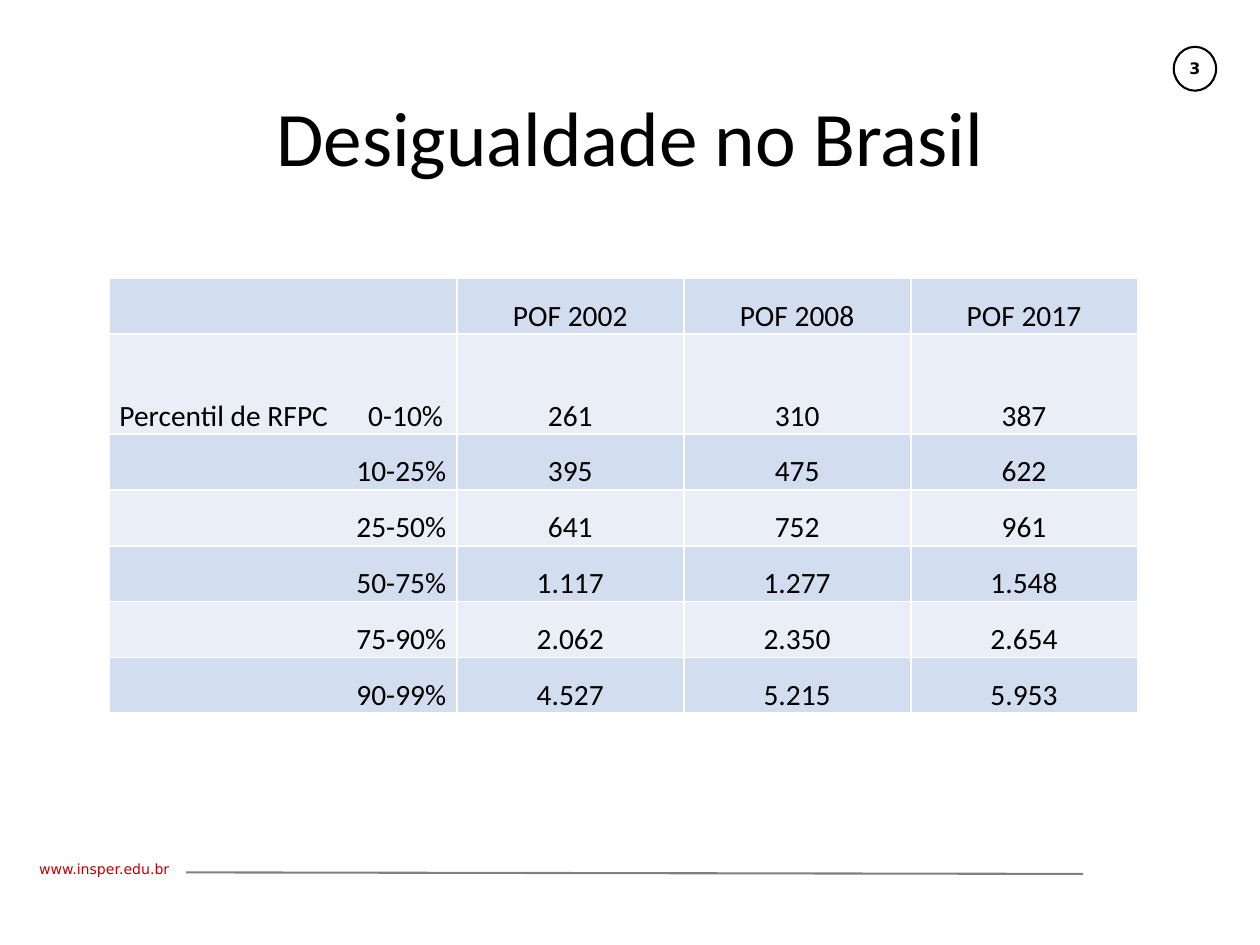
from dataclasses import dataclass

from lxml import etree
from pptx import Presentation
from pptx.dml.color import RGBColor
from pptx.enum.shapes import MSO_CONNECTOR, MSO_SHAPE
from pptx.enum.text import MSO_ANCHOR, PP_ALIGN
from pptx.oxml.ns import qn
from pptx.util import Inches, Pt

LEFT, CENTER, RIGHT = PP_ALIGN.LEFT, PP_ALIGN.CENTER, PP_ALIGN.RIGHT
TOP, MIDDLE, BOTTOM = MSO_ANCHOR.TOP, MSO_ANCHOR.MIDDLE, MSO_ANCHOR.BOTTOM
STRAIGHT = MSO_CONNECTOR.STRAIGHT
ELLIPSE = MSO_SHAPE.OVAL
TITLE_ONLY = 5


@dataclass(frozen=True)
class Theme:
    font: str = "Calibri"
    footer_font: str = "DejaVu Sans"
    text: str = "000000"
    address: str = "C00000"
    rule: str = "808080"
    border: str = "FFFFFF"
    bands: tuple = ("D2DEEF", "EAEFF7")
    title_size: float = 36.7
    table_size: float = 14
    address_size: float = 6.7
    number_size: float = 7.5
    line_width: float = 1


class SlideBuilder:
    def __init__(self, presentation, theme):
        self.theme = theme
        self.slide = presentation.slides.add_slide(presentation.slide_layouts[TITLE_ONLY])

    def format(self, paragraph, size, color=None, font=None, bold=False, align=LEFT):
        paragraph.alignment = align
        paragraph.font.name = font or self.theme.font
        paragraph.font.size = Pt(size)
        paragraph.font.bold = bold
        paragraph.font.color.rgb = RGBColor.from_string(color or self.theme.text)

    def title(self, text, left, top, width, height):
        shape = self.slide.shapes.title
        shape.left, shape.top = Inches(left), Inches(top)
        shape.width, shape.height = Inches(width), Inches(height)
        frame = shape.text_frame
        frame.text = text
        frame.vertical_anchor = MIDDLE
        frame.paragraphs[0].line_spacing = 0.9
        self.format(frame.paragraphs[0], self.theme.title_size, align=CENTER)

    def text_box(self, text, left, top, width, height, margins=(0.1, 0.05), wrap=True, **style):
        shape = self.slide.shapes.add_textbox(
            Inches(left), Inches(top), Inches(width), Inches(height))
        frame = shape.text_frame
        frame.word_wrap = wrap
        frame.vertical_anchor = TOP
        frame.margin_left = frame.margin_right = Inches(margins[0])
        frame.margin_top = frame.margin_bottom = Inches(margins[1])
        frame.text = text
        self.format(frame.paragraphs[0], font=self.theme.footer_font, **style)

    def line(self, start, end, color):
        connector = self.slide.shapes.add_connector(
            STRAIGHT, *(Inches(value) for value in start + end))
        connector.line.color.rgb = RGBColor.from_string(color)
        connector.line.width = Pt(self.theme.line_width)
        etree.SubElement(connector.element.spPr, qn("a:effectLst"))

    def ring(self, left, top, width, height):
        shape = self.slide.shapes.add_shape(
            ELLIPSE, Inches(left), Inches(top), Inches(width), Inches(height))
        shape.shadow.inherit = False
        shape.fill.background()
        shape.line.color.rgb = RGBColor.from_string(self.theme.text)
        shape.line.width = Pt(self.theme.line_width)

    def table(self, rows, left, top, column_widths, row_heights, tab_position):
        frame = self.slide.shapes.add_table(
            len(rows), len(column_widths), Inches(left), Inches(top),
            Inches(sum(column_widths)), Inches(sum(row_heights)))
        table = frame.table
        table.first_row = False
        table.horz_banding = False
        for column, width in zip(table.columns, column_widths):
            column.width = Inches(width)
        for row_index, (row, height) in enumerate(zip(rows, row_heights)):
            table.rows[row_index].height = Inches(height)
            band = self.theme.bands[row_index % 2]
            for column_index, text in enumerate(row):
                cell = table.cell(row_index, column_index)
                self.fill_cell(cell, text, band, CENTER if column_index else RIGHT, tab_position)

    def fill_cell(self, cell, text, band, align, tab_position):
        cell.margin_left = cell.margin_right = Inches(0.07)
        cell.margin_top = cell.margin_bottom = 0
        cell.vertical_anchor = BOTTOM
        self.cell_borders(cell)
        cell.fill.solid()
        cell.fill.fore_color.rgb = RGBColor.from_string(band)
        cell.text = text
        paragraph = cell.text_frame.paragraphs[0]
        paragraph.line_spacing = 1.07
        if "\t" in text:
            align = LEFT
            self.right_tab(paragraph, tab_position)
        self.format(paragraph, self.theme.table_size, align=align)

    def cell_borders(self, cell):
        properties = cell._tc.get_or_add_tcPr()
        for side in ("a:lnL", "a:lnR", "a:lnT", "a:lnB"):
            border = etree.SubElement(properties, qn(side), w=str(Pt(self.theme.line_width)))
            fill = etree.SubElement(border, qn("a:solidFill"))
            etree.SubElement(fill, qn("a:srgbClr"), val=self.theme.border)

    def right_tab(self, paragraph, position):
        properties = paragraph._p.get_or_add_pPr()
        tabs = etree.SubElement(properties, qn("a:tabLst"))
        etree.SubElement(tabs, qn("a:tab"), pos=str(Inches(position)), algn="r")


INCOME_ROWS = [
    ("", "POF 2002", "POF 2008", "POF 2017"),
    ("Percentil de RFPC\t0-10%", "261", "310", "387"),
    ("10-25%", "395", "475", "622"),
    ("25-50%", "641", "752", "961"),
    ("50-75%", "1.117", "1.277", "1.548"),
    ("75-90%", "2.062", "2.350", "2.654"),
    ("90-99%", "4.527", "5.215", "5.953"),
]


def main():
    presentation = Presentation()
    presentation.slide_width = Inches(8.33)
    presentation.slide_height = Inches(6.25)
    theme = Theme()
    builder = SlideBuilder(presentation, theme)

    builder.text_box("www.insper.edu.br", 0.16, 5.64, 1.25, 0.21,
                     size=theme.address_size, color=theme.address)
    builder.line((1.23, 5.77), (7.16, 5.78), theme.rule)
    builder.text_box("3", 7.69, 0.36, 0.42, 0.19, margins=(0.06, 0.03), wrap=False,
                     size=theme.number_size, bold=True, align=CENTER)
    builder.ring(7.76, 0.31, 0.28, 0.29)
    builder.title("Desigualdade no Brasil", 0.57, 0.33, 7.19, 1.21)
    builder.table(INCOME_ROWS, 0.72, 1.84, column_widths=[2.3] + [1.5] * 3,
                  row_heights=[0.37, 0.66] + [0.37] * 5, tab_position=2.14)

    presentation.save("out.pptx")


if __name__ == "__main__":
    main()
